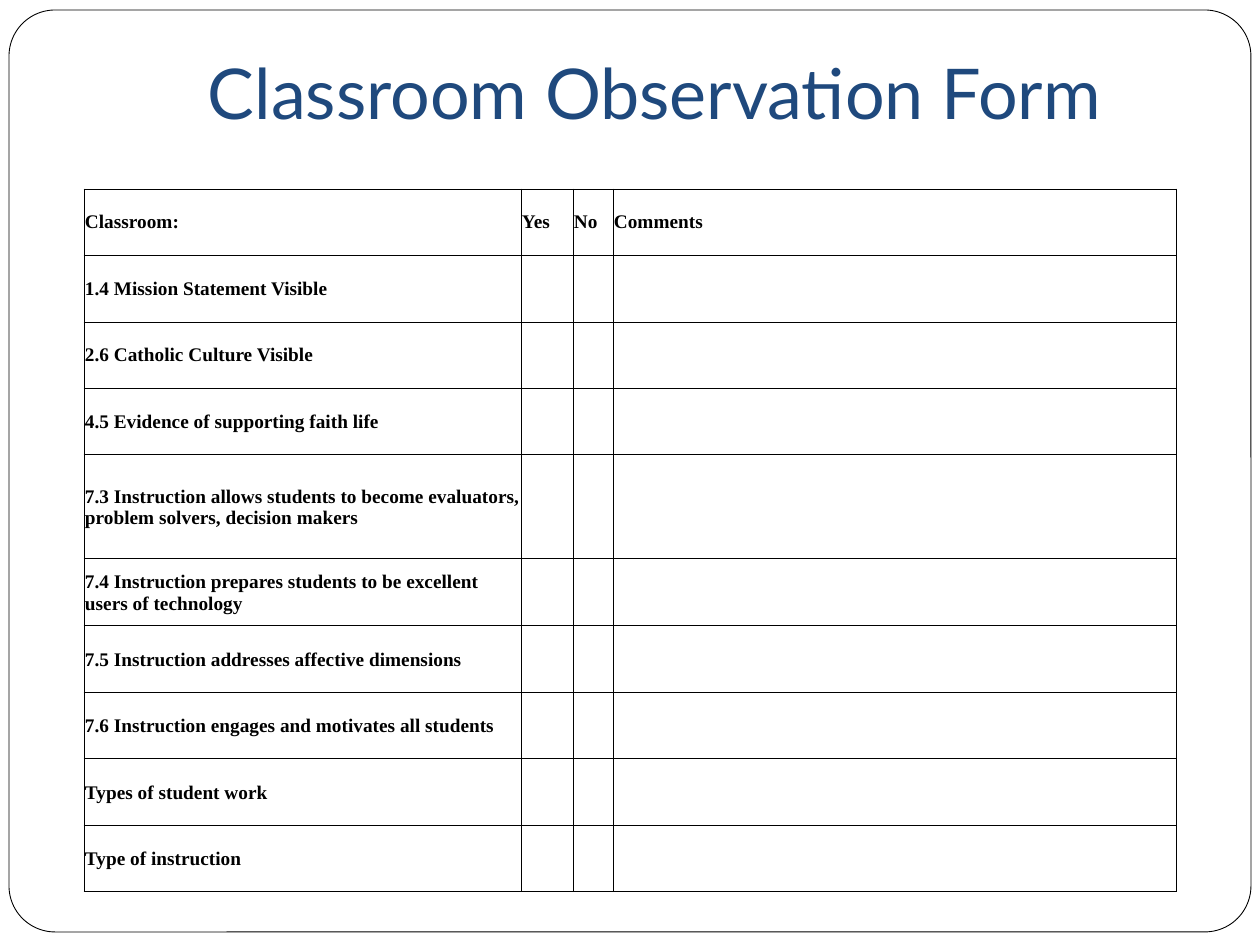
from lxml.etree import SubElement
from pptx import Presentation
from pptx.dml.color import RGBColor
from pptx.enum.shapes import MSO_SHAPE as Shape
from pptx.enum.text import MSO_ANCHOR as Anchor
from pptx.oxml.ns import qn
from pptx.util import Emu, Pt

EMU_PER_PX = 914400 / 126
BLACK, WHITE, NAVY = "000000", "FFFFFF", "1F497D"
COLUMN_WIDTHS = [437, 52, 40, 563, 10]
HEADINGS = ["Classroom:", "Yes", "No", "Comments"]
ROWS = [
    (66, HEADINGS),
    (67, ["1.4 Mission Statement Visible"]),
    (66, ["2.6 Catholic Culture Visible"]),
    (67, ["4.5 Evidence of supporting faith life"]),
    (104, ["7.3 Instruction allows students to become evaluators, "
           "problem solvers, decision makers"]),
    (67, ["7.4 Instruction prepares students to be excellent users of technology"]),
    (67, ["7.5 Instruction addresses affective dimensions"]),
    (66, ["7.6 Instruction engages and motivates all students"]),
    (67, ["Types of student work"]),
    (66, ["Type of instruction"]),
]
TITLE_FONT = {"name": "Lato", "size": Pt(40), "bold": False}
CELL_FONT = {"name": "Times New Roman", "size": Pt(11), "bold": True}


def px(length):
    """Turn a length in px into EMU."""
    return Emu(round(length * EMU_PER_PX))


def color(value):
    """Turn a hex string into a colour."""
    return RGBColor.from_string(value)


def set_format(target, values):
    """Set each attribute named in a dict."""
    for name, value in values.items():
        setattr(target, name, value)


def write(frame, text, font, ink):
    """Write one formatted span into a text frame."""
    span = frame.paragraphs[0].add_run()
    span.text = text
    set_format(span.font, font)
    span.font.color.rgb = color(ink)


def add_frame(page):
    """Draw the rounded frame around the page."""
    frame = page.shapes.add_shape(
        Shape.ROUNDED_RECTANGLE, px(9), px(10), px(1242), px(922))
    frame.adjustments[0] = 0.05
    frame.shadow.inherit = False
    frame.fill.solid()
    frame.fill.fore_color.rgb = color(WHITE)
    frame.line.color.rgb = color(BLACK)
    frame.line.width = Pt(0.5)


def add_title(page, text):
    """Add the title above the table."""
    box = page.shapes.add_textbox(px(126), 0, px(1071), px(147))
    set_format(box.text_frame, {
        "word_wrap": True, "vertical_anchor": Anchor.BOTTOM,
        "margin_left": px(82), "margin_right": 0,
        "margin_top": px(6), "margin_bottom": px(13)})
    write(box.text_frame, text, TITLE_FONT, NAVY)


def set_borders(cell, drawn):
    """Draw the named sides of a cell and clear the others."""
    properties = cell._tc.get_or_add_tcPr()
    for position, side in enumerate(("lnL", "lnR", "lnT", "lnB")):
        line = properties.makeelement(qn(f"a:{side}"), {"w": str(Pt(0.5))})
        properties.insert(position, line)
        if side in drawn:
            fill = SubElement(line, qn("a:solidFill"))
            SubElement(fill, qn("a:srgbClr"), val=BLACK)
        else:
            SubElement(line, qn("a:noFill"))


def fill_cell(cell, text, drawn):
    """Set the text, margins and borders of a cell."""
    set_format(cell, {
        "vertical_anchor": Anchor.MIDDLE, "margin_left": px(1),
        "margin_right": px(1), "margin_top": px(1), "margin_bottom": 0})
    cell.fill.background()
    set_borders(cell, drawn)
    if text:
        write(cell.text_frame, text, CELL_FONT, BLACK)


def add_form(page):
    """Add the observation table with its narrow open last column."""
    heights = [height for height, _ in ROWS]
    table = page.shapes.add_table(
        len(ROWS), len(COLUMN_WIDTHS), px(84), px(189),
        px(sum(COLUMN_WIDTHS)), px(sum(heights))).table
    set_format(table, {"first_row": False, "horz_banding": False})
    for column, width in zip(table.columns, COLUMN_WIDTHS):
        column.width = px(width)
    last = len(COLUMN_WIDTHS) - 1
    for row, (height, texts) in zip(table.rows, ROWS):
        row.height = px(height)
        for index, cell in enumerate(row.cells):
            text = texts[index] if index < len(texts) else ""
            drawn = ("lnL",) if index == last else ("lnL", "lnR", "lnT", "lnB")
            fill_cell(cell, text, drawn)


def main():
    """Build the slide and save it."""
    deck = Presentation()
    set_format(deck, {"slide_width": px(1260), "slide_height": px(945)})
    page = deck.slides.add_slide(deck.slide_layouts[6])
    add_frame(page)
    add_title(page, "Classroom Observation Form")
    add_form(page)
    deck.save("out.pptx")


if __name__ == "__main__":
    main()
